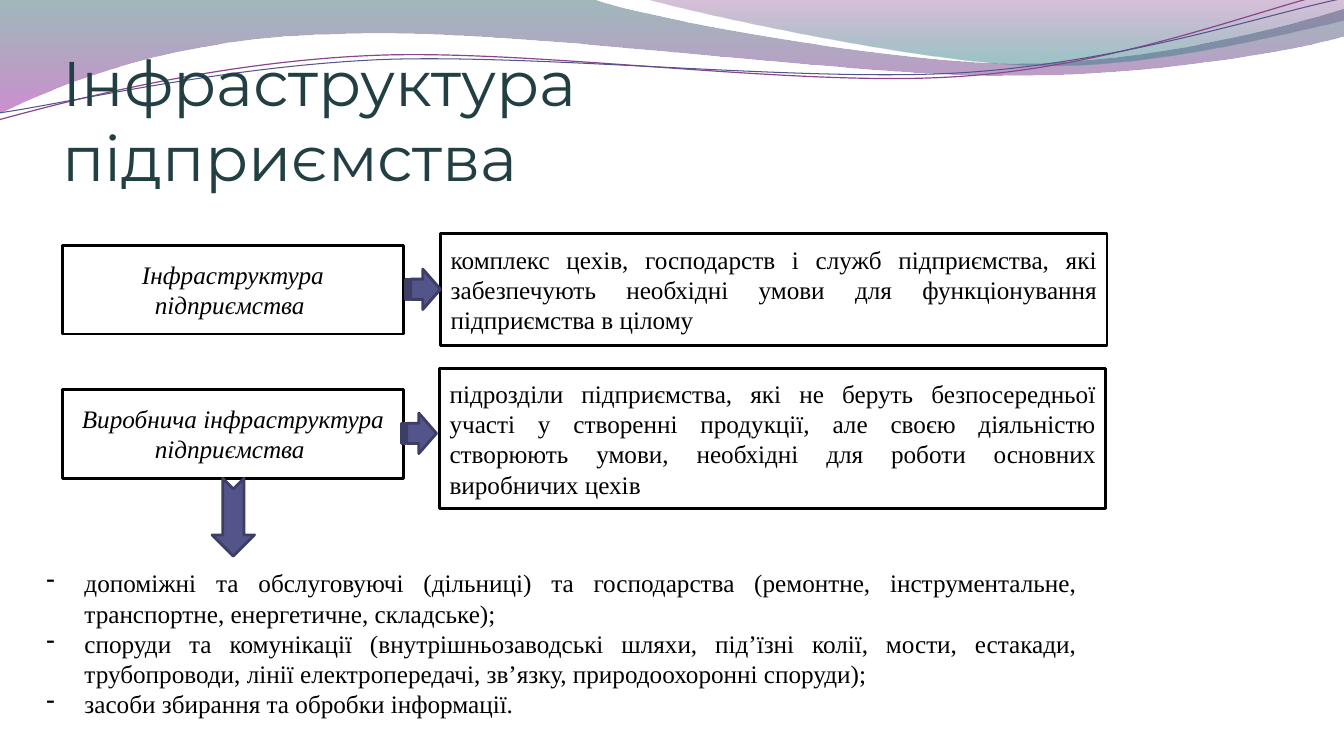
import math
from dataclasses import dataclass
from typing import Any, Optional

import pptx
import pptx.dml.color
import pptx.enum.shapes
import pptx.enum.text
import pptx.oxml
import pptx.oxml.ns
import pptx.util
from pptx.oxml.ns import nsdecls, qn
from pptx.util import Cm, Pt

RGBColor = pptx.dml.color.RGBColor
MSO_SHAPE = pptx.enum.shapes.MSO_SHAPE
PP_ALIGN = pptx.enum.text.PP_ALIGN
MSO_ANCHOR = pptx.enum.text.MSO_ANCHOR
MSO_AUTO_SIZE = pptx.enum.text.MSO_AUTO_SIZE

BLACK = RGBColor(0x00, 0x00, 0x00)
WHITE = RGBColor(0xFF, 0xFF, 0xFF)
TITLE_GREEN = RGBColor(0x22, 0x40, 0x43)
INDIGO = RGBColor(0x53, 0x54, 0x8A)
DARK_INDIGO = RGBColor(0x3D, 0x3E, 0x66)
TEAL = RGBColor(0x2D, 0x63, 0x68)
LIGHT_TEAL = RGBColor(0x2F, 0x7B, 0x82)
MAGENTA = RGBColor(0xA5, 0x30, 0xA9)
PURPLE = RGBColor(0x7F, 0x2F, 0x82)
VIOLET = RGBColor(0x8D, 0x44, 0x90)

BODY_FONT = {"name": "Times New Roman", "size": Pt(18)}
TERM_FONT = {**BODY_FONT, "italic": True}
TITLE_FONT = {"name": "Montserrat", "size": Pt(45), "bold": False}
LINE_TILT = -2.7  # degrees
LINE_PIVOT = (16.9, 1.48)  # cm


@dataclass
class GradientStop:
    position: float
    color: RGBColor
    opacity: int  # percent


@dataclass
class Wave:
    """Start point, then line ends (2 numbers) or Bézier curves (6), in cm."""
    start: tuple
    segments: list
    stops: Optional[list] = None
    line_color: Optional[RGBColor] = None
    line_width: float = 0
    tilt: float = 0


@dataclass
class Box:
    left: float
    top: float
    width: float
    height: float
    text: str
    alignment: Any
    font: dict


@dataclass
class Arrow:
    kind: Any
    left: float
    top: float
    width: float
    height: float
    rotation: float = 0


WAVES = [
    Wave((0, 0), [
        (14.91, -0.03),
        (16.1, 0.43, 22.48, 1.6, 25.68, 1.6),
        (28.91, 1.6, 32.46, 0.66, 33.86, 0.23),
        (33.91, 0.91),
        (33.3, 1.12, 29.46, 1.93, 25.25, 1.91),
        (21.06, 1.91, 12.93, 0.71, 8.71, 0.86),
        (4.37, 0.91, 1.55, 2.11, -0.03, 2.87),
        (0, 0),
    ], stops=[GradientStop(0, TEAL, 45), GradientStop(1, MAGENTA, 55)]),
    Wave((16.23, -0.03), [
        (17.25, 0.28, 23.09, 1.57, 26.04, 1.65),
        (28.98, 1.75, 32.56, 0.81, 33.86, 0.53),
        (33.86, 0),
        (16.23, -0.03),
    ], stops=[GradientStop(0, PURPLE, 30), GradientStop(0.8, LIGHT_TEAL, 45)]),
    Wave((-0.03, 3.02), [
        (1.63, 2.57, 5.36, 1.57, 9.37, 1.4),
        (13.36, 1.22, 20.07, 2.21, 24.13, 1.93),
        (28.19, 1.68, 31.8, 0.2, 33.81, -0.25),
    ], line_color=VIOLET, line_width=0.85, tilt=LINE_TILT),
    Wave((0, 2.84), [
        (1.6, 2.62, 5.54, 1.68, 9.6, 1.5),
        (13.64, 1.35, 20.22, 2.08, 24.26, 1.83),
        (28.32, 1.57, 31.88, 0.36, 33.88, -0.05),
    ], line_color=INDIGO, line_width=0.75, tilt=LINE_TILT),
]

BOXES = [
    Box(1.57, 6.18, 8.6, 2.24, "Інфраструктура підприємства ", PP_ALIGN.CENTER, TERM_FONT),
    Box(11.11, 5.89, 16.79, 2.82,
        "комплекс цехів, господарств і служб підприємства, які забезпечують необхідні "
        "умови для функціонування підприємства в цілому", PP_ALIGN.JUSTIFY, BODY_FONT),
    Box(1.57, 9.81, 8.6, 2.24, "Виробнича інфраструктура підприємства ", PP_ALIGN.CENTER, TERM_FONT),
    Box(11.08, 9.29, 16.79, 3.53,
        "підрозділи підприємства, які не беруть безпосередньої участі у створенні продукції, "
        "але своєю діяльністю створюють умови, необхідні для роботи основних виробничих цехів",
        PP_ALIGN.JUSTIFY, BODY_FONT),
]

ARROWS = [
    Arrow(MSO_SHAPE.STRIPED_RIGHT_ARROW, 10.21, 6.78, 0.89, 1.02),
    Arrow(MSO_SHAPE.STRIPED_RIGHT_ARROW, 10.11, 10.41, 0.89, 1.02),
    Arrow(MSO_SHAPE.NOTCHED_RIGHT_ARROW, 4.9, 12.5, 1.96, 1.07, rotation=90),
]

COMPONENTS = [
    "допоміжні та обслуговуючі (дільниці) та господарства (ремонтне, інструментальне, "
    "транспортне, енергетичне, складське);",
    "споруди та комунікації (внутрішньозаводські шляхи, під’їзні колії, мости, естакади, "
    "трубопроводи, лінії електропередачі, зв’язку, природоохоронні споруди);",
    "засоби збирання та обробки інформації.",
]


def apply_format(target: Any, values: dict) -> None:
    for attribute, value in values.items():
        setattr(target, attribute, value)


def write_paragraph(paragraph: Any, text: str, alignment: Any, font: dict, color: RGBColor) -> None:
    paragraph.alignment = alignment
    run = paragraph.add_run()
    run.text = text
    apply_format(run.font, font)
    run.font.color.rgb = color


def style_shape(shape: Any, fill: RGBColor, line: RGBColor) -> None:
    shape.shadow.inherit = False
    shape.fill.solid()
    shape.fill.fore_color.rgb = fill
    shape.line.color.rgb = line
    shape.line.width = Pt(2)


def level(point: tuple, tilt: float) -> tuple:
    """Turn a point back around the pivot, so that the shape's rotation restores it."""
    angle = math.radians(-tilt)
    dx, dy = point[0] - LINE_PIVOT[0], point[1] - LINE_PIVOT[1]
    return (Cm(LINE_PIVOT[0] + dx * math.cos(angle) - dy * math.sin(angle)),
            Cm(LINE_PIVOT[1] + dx * math.sin(angle) + dy * math.cos(angle)))


def bend(shape: Any, segments: list) -> None:
    """Join every three line ends of a curve into one Bézier segment."""
    lines = iter(shape._element.spPr.findall(".//" + qn("a:lnTo")))
    for segment in segments:
        first, *others = [next(lines) for _ in segment[::2]]
        if others:
            first.tag = qn("a:cubicBezTo")
            for line in others:
                first.append(line[0])
                line.getparent().remove(line)


def draw_wave(shapes: Any, wave: Wave) -> None:
    points = [segment[i:i + 2] for segment in wave.segments for i in range(0, len(segment), 2)]
    builder = shapes.build_freeform(*level(wave.start, wave.tilt))
    builder.add_line_segments([level(point, wave.tilt) for point in points],
                              close=wave.stops is not None)
    shape = builder.convert_to_shape()
    bend(shape, wave.segments)
    shape.rotation = wave.tilt
    shape.shadow.inherit = False
    if wave.stops is None:
        shape.fill.background()
        shape.line.color.rgb = wave.line_color
        shape.line.width = Pt(wave.line_width)
        return
    shape.line.fill.background()
    shape.fill.gradient()
    shape.fill.gradient_angle = 270
    for stop, values in zip(shape.fill.gradient_stops, wave.stops):
        stop.position = values.position
        stop.color.rgb = values.color
    colors = shape._element.spPr.findall(".//" + qn("a:gs") + "/" + qn("a:srgbClr"))
    for color, values in zip(colors, wave.stops):
        color.append(pptx.oxml.parse_xml(f'<a:alpha {nsdecls("a")} val="{values.opacity * 1000}"/>'))


def draw_box(shapes: Any, box: Box) -> None:
    shape = shapes.add_shape(MSO_SHAPE.RECTANGLE, Cm(box.left), Cm(box.top), Cm(box.width), Cm(box.height))
    style_shape(shape, WHITE, BLACK)
    apply_format(shape.text_frame, {"word_wrap": True, "vertical_anchor": MSO_ANCHOR.MIDDLE})
    write_paragraph(shape.text_frame.paragraphs[0], box.text, box.alignment, box.font, BLACK)


def draw_arrow(shapes: Any, arrow: Arrow) -> None:
    shape = shapes.add_shape(arrow.kind, Cm(arrow.left), Cm(arrow.top), Cm(arrow.width), Cm(arrow.height))
    style_shape(shape, INDIGO, DARK_INDIGO)
    shape.rotation = arrow.rotation


def draw_components(shapes: Any) -> None:
    frame = shapes.add_textbox(Cm(0.92), Cm(14.18), Cm(26.47), Cm(4.11)).text_frame
    apply_format(frame, {"word_wrap": True, "auto_size": MSO_AUTO_SIZE.SHAPE_TO_FIT_TEXT})
    for index, component in enumerate(COMPONENTS):
        paragraph = frame.add_paragraph() if index else frame.paragraphs[0]
        write_paragraph(paragraph, component, PP_ALIGN.JUSTIFY, BODY_FONT, BLACK)
        properties = paragraph._p.get_or_add_pPr()
        properties.set("marL", str(Cm(0.96)))
        properties.set("indent", str(-Cm(0.96)))
        for bullet in ("buFontTx", 'buChar char="-"'):
            properties.append(pptx.oxml.parse_xml(f'<a:{bullet} {nsdecls("a")}/>'))


def place_title(title: Any) -> None:
    apply_format(title, {"left": Cm(1.57), "top": Cm(3.55), "width": Cm(23.88), "height": Cm(1.35)})
    apply_format(title.text_frame, {
        "word_wrap": True, "auto_size": MSO_AUTO_SIZE.NONE, "vertical_anchor": MSO_ANCHOR.BOTTOM,
        "margin_left": 0, "margin_top": Cm(0.13), "margin_right": 0, "margin_bottom": 0})
    write_paragraph(title.text_frame.paragraphs[0], "Інфраструктура підприємства",
                    PP_ALIGN.LEFT, TITLE_FONT, TITLE_GREEN)


def main() -> None:
    deck = pptx.Presentation()
    apply_format(deck, {"slide_width": Cm(33.87), "slide_height": Cm(19.05)})
    shapes = deck.slides.add_slide(deck.slide_layouts[5]).shapes

    # Waves along the top edge, with the title in front of them
    for wave in WAVES:
        draw_wave(shapes, wave)
    place_title(shapes.title)
    shapes._spTree.append(shapes.title._element)

    # Terms, their definitions and the arrows between them
    for box in BOXES:
        draw_box(shapes, box)
    for arrow in ARROWS:
        draw_arrow(shapes, arrow)

    # Components of the production infrastructure
    draw_components(shapes)
    deck.save("out.pptx")


if __name__ == "__main__":
    main()
